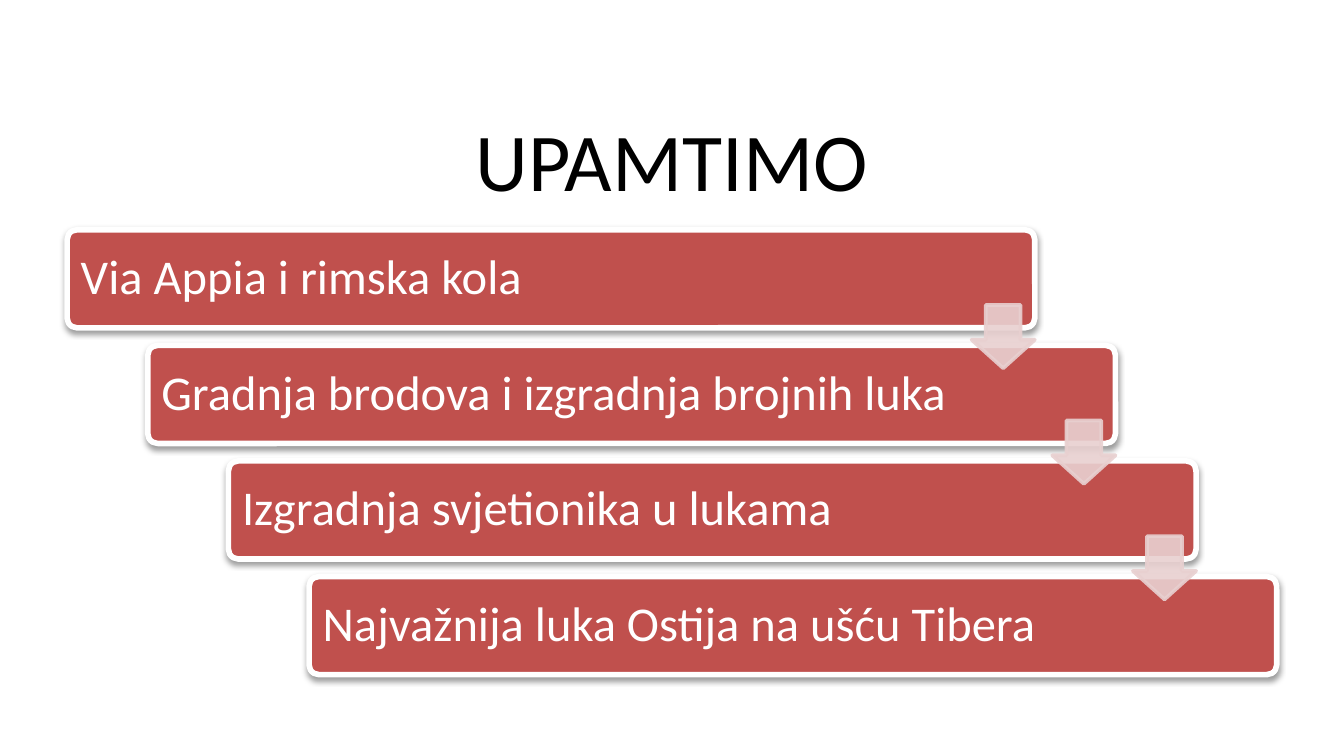
from lxml import etree
from pptx import Presentation
from pptx.dml.color import RGBColor
from pptx.enum.shapes import MSO_SHAPE
from pptx.enum.text import MSO_ANCHOR, PP_ALIGN
from pptx.oxml import parse_xml
from pptx.oxml.ns import qn
from pptx.util import Inches, Pt

ROUNDED, DOWN_ARROW = MSO_SHAPE.ROUNDED_RECTANGLE, MSO_SHAPE.DOWN_ARROW
MIDDLE = MSO_ANCHOR.MIDDLE
LEFT, CENTER = PP_ALIGN.LEFT, PP_ALIGN.CENTER

BLACK = RGBColor(0x00, 0x00, 0x00)
WHITE = RGBColor(0xFF, 0xFF, 0xFF)
RED = RGBColor(0xC0, 0x50, 0x4D)
PINK = RGBColor(0xE8, 0xD0, 0xD0)

SHADOW = (
    '<a:effectLst xmlns:a="http://schemas.openxmlformats.org/drawingml/2006/main">'
    '<a:outerShdw blurRad="40000" dist="20000" dir="5400000" rotWithShape="0">'
    '<a:srgbClr val="000000"><a:alpha val="38000"/></a:srgbClr>'
    '</a:outerShdw></a:effectLst>'
)

STEPS = [
    "Via Appia i rimska kola",
    "Gradnja brodova i izgradnja brojnih luka",
    "Izgradnja svjetionika u lukama",
    "Najvažnija luka Ostija na ušću Tibera",
]
STEP_X, STEP_Y = 0.6, 0.86


def add_step_shape(kind, left, top, width, height, fill, line, line_width):
    shape = slide.shapes.add_shape(
        kind, Inches(left), Inches(top), Inches(width), Inches(height))
    shape.shadow.inherit = False
    shape.fill.solid()
    shape.fill.fore_color.rgb = fill
    shape.line.color.rgb = line
    shape.line.width = Pt(line_width)
    return shape


def write_line(frame, text, size, color, alignment):
    frame.text = text
    frame.word_wrap = True
    frame.vertical_anchor = MIDDLE
    para = frame.paragraphs[0]
    para.alignment = alignment
    para.line_spacing = 0.9
    font = para.runs[0].font
    font.name = "Calibri"
    font.size = Pt(size)
    font.color.rgb = color


deck = Presentation()
deck.slide_width = Inches(10)
deck.slide_height = deck.slide_width * 9 // 16
slide = deck.slides.add_slide(deck.slide_layouts[5])

title = slide.shapes.title
title.left, title.top = Inches(0.5), Inches(0.84)
title.width, title.height = Inches(9), Inches(0.78)
write_line(title.text_frame, "UPAMTIMO", 44, BLACK, CENTER)

for index, text in enumerate(STEPS):
    bar = add_step_shape(ROUNDED, 0.5 + index * STEP_X, 1.71 + index * STEP_Y,
                         7.2, 0.73, RED, WHITE, 3)
    bar.adjustments[0] = 0.1
    properties = bar.fill._xPr
    properties.replace(properties.find(qn("a:effectLst")), parse_xml(SHADOW))
    frame = bar.text_frame
    frame.margin_left = frame.margin_right = Inches(0.08)
    frame.margin_top = frame.margin_bottom = Inches(0.11)
    write_line(frame, text, 26, WHITE, LEFT)

for index in range(len(STEPS) - 1):
    arrow = add_step_shape(DOWN_ARROW, 7.23 + index * STEP_X, 2.27 + index * STEP_Y,
                           0.47, 0.47, PINK, PINK, 2)
    arrow.adjustments[0], arrow.adjustments[1] = 0.55, 0.45
    for color in arrow.fill._xPr.iter(qn("a:srgbClr")):
        etree.SubElement(color, qn("a:alpha"), val="90000")

deck.save("out.pptx")
